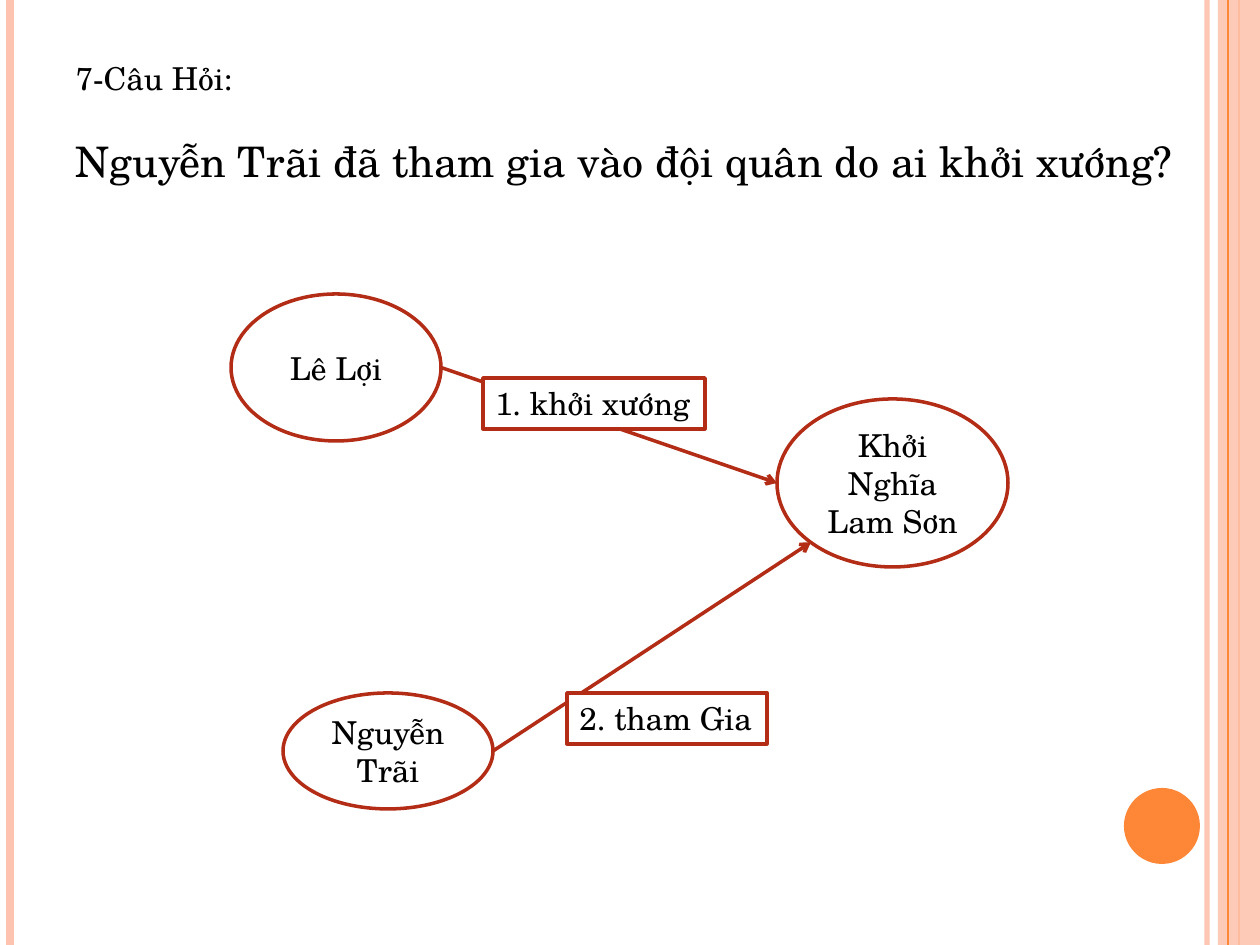
from math import cos, radians, sin

from lxml.etree import SubElement
from pptx import Presentation
from pptx.dml.color import RGBColor
from pptx.enum.shapes import MSO_CONNECTOR, MSO_SHAPE
from pptx.enum.text import MSO_ANCHOR as Anchor, PP_ALIGN as Align
from pptx.oxml.ns import qn
from pptx.util import Pt

PX = 914400 / 126
WIDTH, HEIGHT = 1260, 945
FONT = "TeX Gyre Schola"
COLORS = {
    "paper": "FFFFFF",
    "text": "000000",
    "outline": "B32C16",
    "peach": "FEC3AE",
    "orange": "FE8637",
}


def emu(*lengths):
    return [round(length * PX) for length in lengths]


def color(name):
    return RGBColor.from_string(COLORS[name])


def set_opacity(fill_parent, percent):
    tag = next(fill_parent.iter(qn("a:srgbClr")))
    SubElement(tag, qn("a:alpha"), val=str(percent * 1000))


def add_text(para, text, size, align):
    para.alignment = align
    span = para.add_run()
    span.text = text
    span.font.name = FONT
    span.font.size = Pt(size)
    span.font.color.rgb = color("text")


def add_line(page, start, end, name, weight, arrow=False, opacity=100):
    line = page.shapes.add_connector(MSO_CONNECTOR.STRAIGHT, *emu(*start, *end))
    line.line.color.rgb = color(name)
    line.line.width = Pt(weight)
    outline = line.line._get_or_add_ln()
    if opacity < 100:
        set_opacity(outline, opacity)
    if arrow:
        SubElement(outline, qn("a:tailEnd"), type="arrow")
    SubElement(line._element.spPr, qn("a:effectLst"))


def add_filled(page, kind, at, name):
    """Add a flat shape without an outline."""
    shape = page.shapes.add_shape(kind, *emu(*at))
    shape.shadow.inherit = False
    shape.fill.solid()
    shape.fill.fore_color.rgb = color(name)
    shape.line.fill.background()
    return shape


def add_outlined(page, kind, at, text, align=Align.CENTER):
    shape = add_filled(page, kind, at, "paper")
    shape.line.color.rgb = color("outline")
    shape.line.width = Pt(2)
    add_text(shape.text_frame.paragraphs[0], text, 18, align)
    return shape


def add_label(page, at, text):
    label = add_outlined(page, MSO_SHAPE.RECTANGLE, at, text, Align.LEFT)
    label.text_frame.word_wrap = False
    label.text_frame.vertical_anchor = Anchor.TOP


def oval_point(at, degrees):
    """Give the point on an oval's edge, clockwise from its right end."""
    left, top, width, height = at
    angle = radians(degrees)
    return (left + width / 2 * (1 + cos(angle)),
            top + height / 2 * (1 + sin(angle)))


def add_frame(page):
    for x, name, weight, opacity in (
        (1207, "peach", 3, 93),
        (10, "peach", 4.5, 100),
        (1239, "orange", 1.5, 100),
    ):
        add_line(page, (x, 0), (x, HEIGHT), name, weight, opacity=opacity)
    band = add_filled(page, MSO_SHAPE.RECTANGLE, (1218, 0, 42, HEIGHT), "peach")
    set_opacity(band._element.spPr, 87)
    add_line(page, (1228, 0), (1228, HEIGHT), "orange", 0.75)
    add_filled(page, MSO_SHAPE.OVAL, (1124, 788, 76, 76), "orange")


def add_question(page, heading, question):
    box = page.shapes.title
    box.left, box.top, box.width, box.height = emu(63, 53, 1176, 140)
    frame = box.text_frame
    frame.word_wrap = True
    frame.vertical_anchor = Anchor.TOP
    add_text(frame.paragraphs[0], heading, 18, Align.LEFT)
    para = frame.add_paragraph()
    para.space_before = Pt(22)
    add_text(para, question, 24, Align.LEFT)


def add_diagram(page):
    leader = (231, 294, 210, 147)
    uprising = (777, 399, 231, 168)
    scholar = (283, 693, 210, 116)
    for at, name in ((leader, "Lê Lợi"), (uprising, "Khởi Nghĩa Lam Sơn"),
                     (scholar, "Nguyễn Trãi")):
        add_outlined(page, MSO_SHAPE.OVAL, at, name)
    for source, angle in ((leader, 180), (scholar, 135)):
        add_line(page, oval_point(source, 0), oval_point(uprising, angle),
                 "outline", 2, arrow=True)
    add_label(page, (483, 378, 222, 51), "1. khởi xướng")
    add_label(page, (567, 693, 200, 51), "2. tham Gia")


def main():
    deck = Presentation()
    deck.slide_width, deck.slide_height = emu(WIDTH, HEIGHT)
    page = deck.slides.add_slide(deck.slide_layouts.get_by_name("Title Only"))
    page.background.fill.solid()
    page.background.fill.fore_color.rgb = color("paper")
    add_frame(page)
    add_question(page, "7-Câu Hỏi:",
                 "Nguyễn Trãi đã tham gia vào đội quân do ai khởi xướng?")
    add_diagram(page)
    deck.save("out.pptx")


if __name__ == "__main__":
    main()
